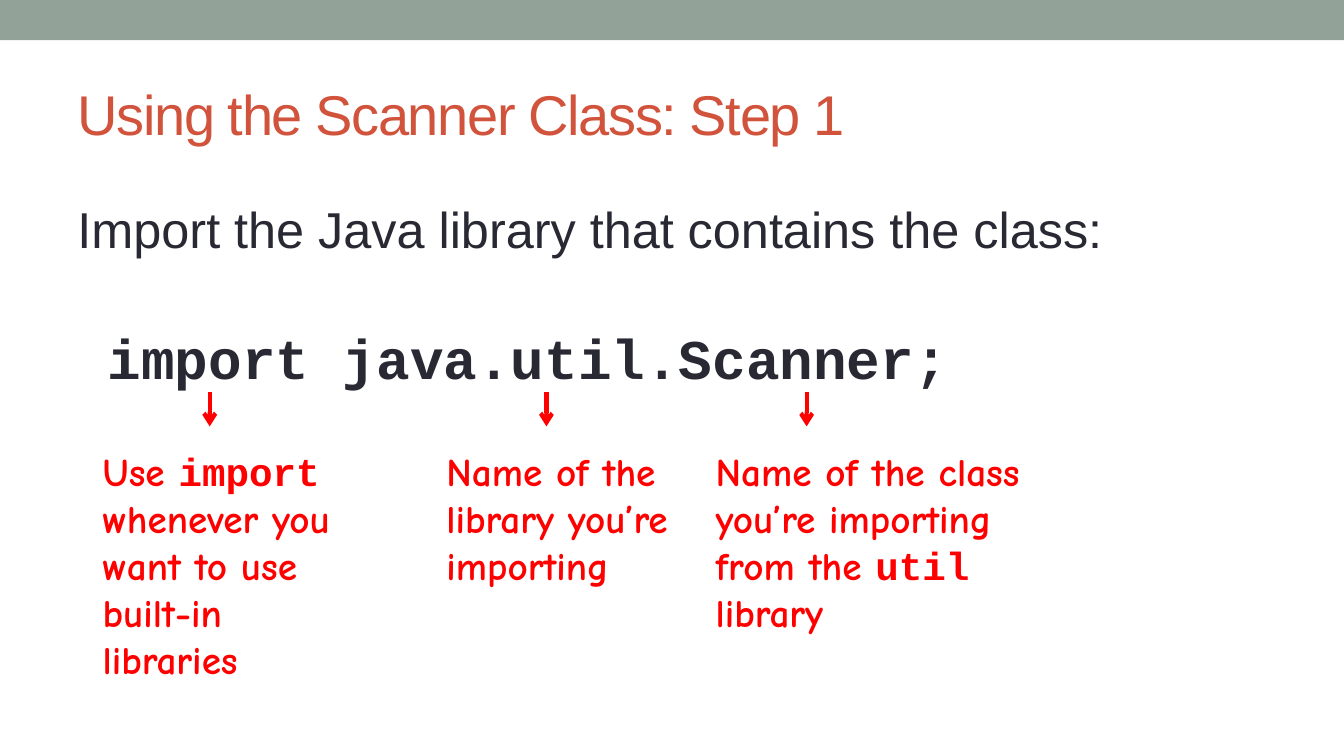
from pptx import Presentation
from pptx.dml.color import RGBColor
from pptx.enum import shapes, text
from pptx.oxml.ns import qn
from pptx.util import Inches, Pt
from lxml import etree

SAGE = RGBColor(0x93, 0xA2, 0x99)
RUST = RGBColor(0xD2, 0x53, 0x3C)
INK = RGBColor(0x29, 0x29, 0x34)
RED = RGBColor(0xFF, 0x00, 0x00)
SANS, HAND, CODE = "Arial", "Comic Neue", "Courier New"

# Box left, box width, arrow x, height, and (words, font) runs of each note
NOTES = [
    (0.92, 2.5, 2.08, 2.46, [("Use ", HAND), ("import", CODE),
                             (" whenever you want to use built-in libraries", HAND)]),
    (4.33, 2.5, 5.42, 1.99, [("Name of the library you’re importing", HAND)]),
    (7, 3.4, 8, 1.99, [("Name of the class you’re importing from the ", HAND),
                       ("util", CODE), (" library", HAND)]),
]


def style(font, name, size, color, bold=False):
    font.name, font.size, font.bold = name, Pt(size), bold
    font.color.rgb = color


def add_band(slide, x, y, w, h):
    band = slide.shapes.add_shape(shapes.MSO_SHAPE.RECTANGLE,
                                  Inches(x), Inches(y), Inches(w), Inches(h))
    band.shadow.inherit = False
    band.fill.solid()
    band.fill.fore_color.rgb = SAGE
    band.line.fill.background()


def add_title(slide, x, y, w, h):
    title = slide.shapes.title
    title.left, title.top = Inches(x), Inches(y)
    title.width, title.height = Inches(w), Inches(h)
    frame = title.text_frame
    frame.vertical_anchor = text.MSO_ANCHOR.MIDDLE
    para = frame.paragraphs[0]
    para.alignment = text.PP_ALIGN.LEFT
    run = para.add_run()
    run.text = "Using the Scanner Class: Step 1"
    style(run.font, SANS, 40, RUST)
    run.font._element.set("spc", "-100")


def add_body(slide, x, y, w, h):
    frame = slide.shapes.add_textbox(Inches(x), Inches(y), Inches(w), Inches(h)).text_frame
    frame.word_wrap = True
    frame.margin_top = Inches(0.1)
    lead = frame.paragraphs[0]
    lead.text = "Import the Java library that contains the class:"
    style(lead.font, SANS, 36, INK)
    code = frame.add_paragraph()
    code.text = "import java.util.Scanner;"
    code.space_before = Pt(46)
    code._p.get_or_add_pPr().set("marL", str(Inches(0.3)))
    style(code.font, CODE, 40, INK, True)


def add_arrow(group, x, top, end):
    arrow = group.shapes.add_connector(shapes.MSO_CONNECTOR.STRAIGHT,
                                       Inches(x), Inches(top), Inches(x), Inches(end))
    arrow.line.color.rgb = RED
    arrow.line.width = Pt(3)
    etree.SubElement(arrow.line._get_or_add_ln(), qn("a:tailEnd"), type="arrow")
    etree.SubElement(arrow._element.spPr, qn("a:effectLst"))


def add_note(slide, x, y, w, h, stem, runs):
    """Group a note with the arrow that ends just above it."""
    group = slide.shapes.add_group_shape()
    box = group.shapes.add_textbox(Inches(x), Inches(y), Inches(w), Inches(h))
    frame = box.text_frame
    frame.word_wrap = True
    frame.auto_size = text.MSO_AUTO_SIZE.SHAPE_TO_FIT_TEXT
    for words, name in runs:
        run = frame.paragraphs[0].add_run()
        run.text = words
        style(run.font, name, 28, RED, True)
    add_arrow(group, stem, y - 0.5, y - 0.16)


def main():
    deck = Presentation()
    deck.slide_width, deck.slide_height = Inches(13.33), Inches(7.5)
    slide = deck.slides.add_slide(deck.slide_layouts[5])
    add_band(slide, 0, 0, 13.33, 0.4)
    add_title(slide, 0.67, 0.58, 12, 1.08)
    add_body(slide, 0.67, 1.87, 11.56, 5.33)
    for x, w, stem, h, runs in NOTES:
        add_note(slide, x, 4.39, w, h, stem, runs)
    deck.save("out.pptx")


if __name__ == "__main__":
    main()
